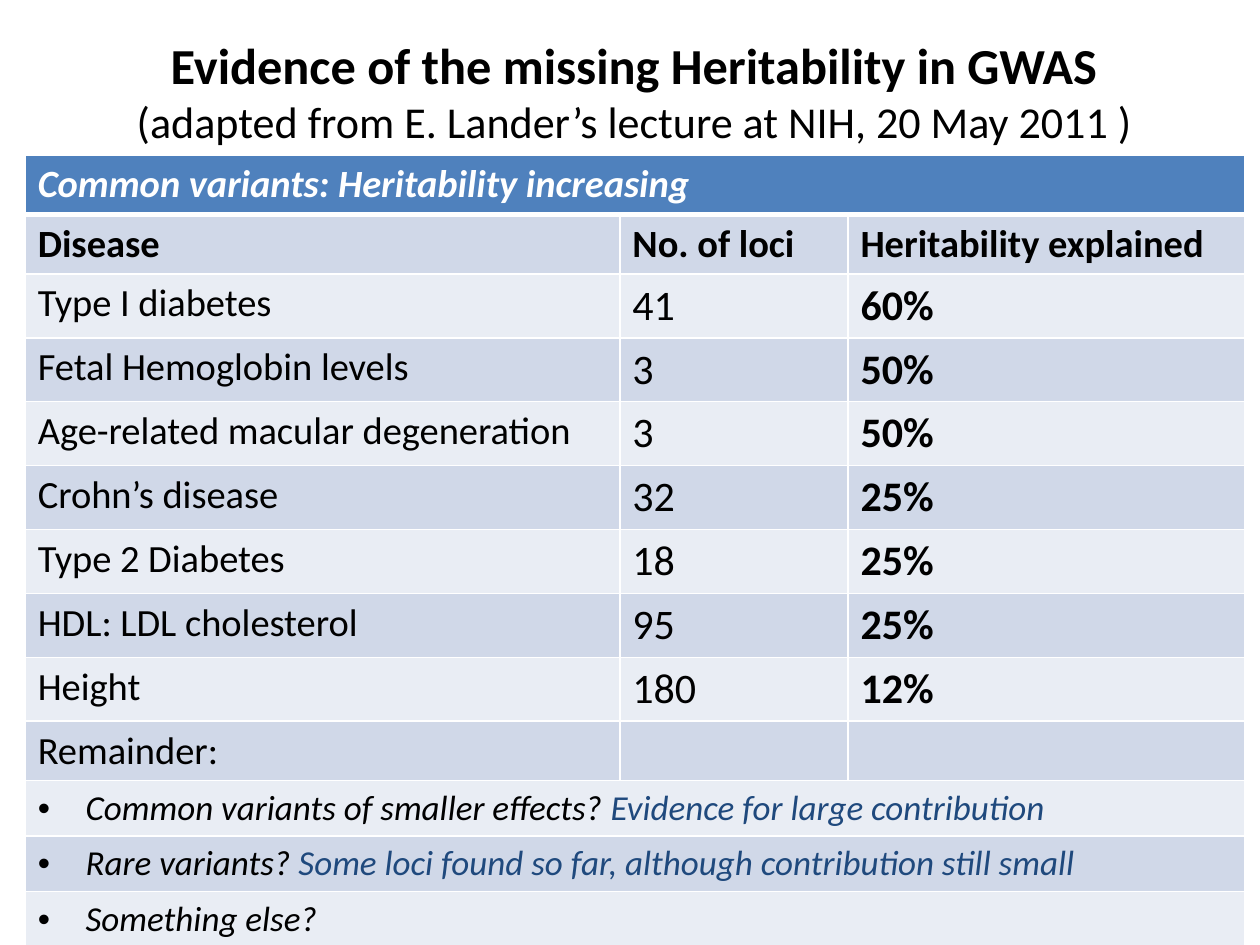
from lxml import etree
from pptx import Presentation
from pptx import util as u
from pptx.dml.color import RGBColor
from pptx.enum import text
from pptx.oxml import ns

WHITE = RGBColor(0xFF, 0xFF, 0xFF)
BLACK = RGBColor(0x00, 0x00, 0x00)
HEADER_BLUE = RGBColor(0x4F, 0x81, 0xBD)
DARK_BAND = RGBColor(0xD0, 0xD8, 0xE8)
LIGHT_BAND = RGBColor(0xE9, 0xED, 0xF4)
NAVY = RGBColor(0x1F, 0x49, 0x7D)

COLUMN_WIDTHS = [4.72, 1.81, 3.15]
DISEASES = [
    ("Type I diabetes", "41", "60%"),
    ("Fetal Hemoglobin levels", "3", "50%"),
    ("Age-related macular degeneration", "3", "50%"),
    ("Crohn’s disease", "32", "25%"),
    ("Type 2 Diabetes", "18", "25%"),
    ("HDL: LDL cholesterol", "95", "25%"),
    ("Height", "180", "12%"),
]
EXPLANATIONS = [
    ("Common variants of smaller effects? ", "Evidence for large contribution"),
    ("Rare variants? ", "Some loci found so far, although contribution still small"),
    ("Something else?", ""),
]
ROW_HEIGHTS = [0.47] * 2 + [0.5] * len(DISEASES) + [0.47] + [0.43] * len(EXPLANATIONS)


class SlideBuilder:
    """Holds the text style and the current slide, and adds its elements."""

    def __init__(self, slide, font="Calibri"):
        self.slide = slide
        self.font = font

    def add_run(self, paragraph, words, size, color=BLACK, bold=False, italic=False):
        run = paragraph.add_run()
        run.text = words
        run.font.name = self.font
        run.font.size = u.Pt(size)
        run.font.bold = bold
        run.font.italic = italic
        run.font.color.rgb = color

    def add_title(self, left, top, width, height, lines):
        title = self.slide.shapes.title
        title.left, title.top = u.Inches(left), u.Inches(top)
        title.width, title.height = u.Inches(width), u.Inches(height)
        frame = title.text_frame
        frame.word_wrap = True
        frame.auto_size = text.MSO_AUTO_SIZE.NONE
        frame.vertical_anchor = text.MSO_ANCHOR.MIDDLE
        for index, (words, size, bold) in enumerate(lines):
            paragraph = frame.add_paragraph() if index else frame.paragraphs[0]
            paragraph.alignment = text.PP_ALIGN.CENTER
            self.add_run(paragraph, words, size, bold=bold)

    def add_table(self, left, top, widths, heights):
        table = self.slide.shapes.add_table(
            len(heights), len(widths), u.Inches(left), u.Inches(top),
            u.Inches(sum(widths)), u.Inches(sum(heights))).table
        for column, width in zip(table.columns, widths):
            column.width = u.Inches(width)
        for index, (row, height) in enumerate(zip(table.rows, heights)):
            row.height = u.Inches(height)
            band = DARK_BAND if index % 2 else LIGHT_BAND
            for cell in row.cells:
                self.set_borders(cell, top=3 if index == 1 else 1, bottom=1 if index else 3)
                cell.fill.solid()
                cell.fill.fore_color.rgb = band if index else HEADER_BLUE
        return table

    def set_borders(self, cell, top, bottom):
        properties = cell._tc.get_or_add_tcPr()
        for side, points in (("L", 1), ("R", 1), ("T", top), ("B", bottom)):
            line = etree.SubElement(properties, ns.qn(f"a:ln{side}"), w=str(u.Pt(points)))
            fill = etree.SubElement(line, ns.qn("a:solidFill"))
            etree.SubElement(fill, ns.qn("a:srgbClr"), val=str(WHITE))

    def merge_row(self, table, row):
        cell = table.cell(row, 0)
        cell.merge(table.cell(row, len(table.columns) - 1))
        return cell.text_frame.paragraphs[0]

    def fill_row(self, table, row, values, sizes, bolds):
        for column, (words, size, bold) in enumerate(zip(values, sizes, bolds)):
            paragraph = table.cell(row, column).text_frame.paragraphs[0]
            self.add_run(paragraph, words, size, bold=bold)

    def add_bullet(self, paragraph, indent):
        properties = paragraph._p.get_or_add_pPr()
        properties.set("marL", str(u.Inches(indent)))
        properties.set("indent", str(-u.Inches(indent)))
        etree.SubElement(properties, ns.qn("a:buFont"), typeface="Arial")
        etree.SubElement(properties, ns.qn("a:buChar"), char="•")


def main():
    presentation = Presentation()
    presentation.slide_width, presentation.slide_height = u.Inches(10), u.Inches(7.5)
    builder = SlideBuilder(presentation.slides.add_slide(presentation.slide_layouts[5]))

    builder.add_title(0.27, 0.21, 9.53, 1.02, [
        ("Evidence of the missing Heritability in GWAS", 28.8, True),
        ("(adapted from E. Lander’s lecture at NIH, 20 May 2011 )", 25.2, False),
    ])

    table = builder.add_table(0.2, 1.23, COLUMN_WIDTHS, ROW_HEIGHTS)
    builder.add_run(builder.merge_row(table, 0), "Common variants: Heritability increasing",
                    22, WHITE, bold=True, italic=True)
    builder.fill_row(table, 1, ("Disease", "No. of loci", "Heritability explained"),
                     (22, 22, 22), (True, True, True))
    for row, disease in enumerate(DISEASES, start=2):
        builder.fill_row(table, row, disease, (22, 24, 24), (False, False, True))
    remainder_row = 2 + len(DISEASES)
    builder.fill_row(table, remainder_row, ("Remainder:",), (22,), (False,))
    for row, (question, finding) in enumerate(EXPLANATIONS, start=remainder_row + 1):
        paragraph = builder.merge_row(table, row)
        builder.add_bullet(paragraph, 0.38)
        builder.add_run(paragraph, question, 20, italic=True)
        if finding:
            builder.add_run(paragraph, finding, 20, NAVY, italic=True)

    presentation.save("out.pptx")


if __name__ == "__main__":
    main()
